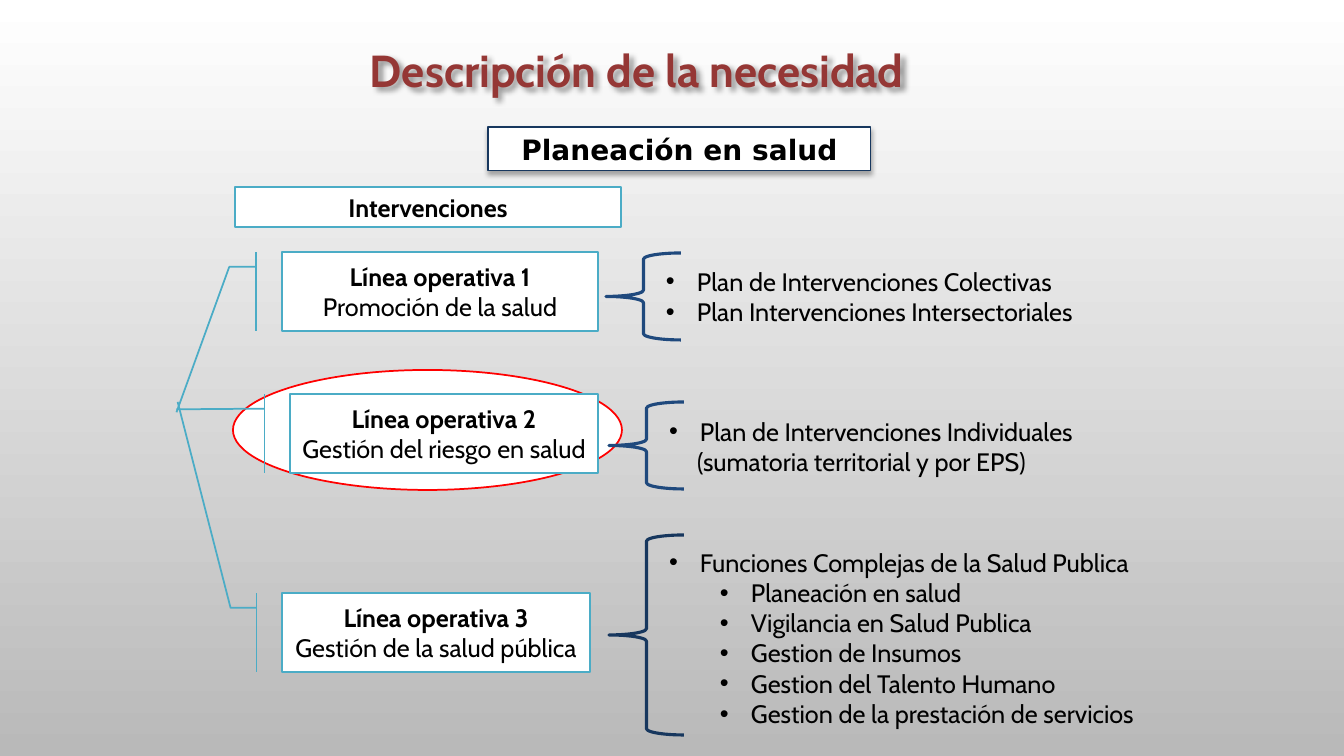
from lxml import etree
from pptx import Presentation
from pptx.dml.color import RGBColor
from pptx.enum.shapes import MSO_SHAPE
from pptx.enum.text import MSO_ANCHOR, MSO_AUTO_SIZE, PP_ALIGN
from pptx.oxml.ns import qn
from pptx.util import Pt

PX = 12192000 / 1344
CENTER, LEFT = PP_ALIGN.CENTER, PP_ALIGN.LEFT
TOP, MIDDLE = MSO_ANCHOR.TOP, MSO_ANCHOR.MIDDLE
RECTANGLE, OVAL, BRACE = MSO_SHAPE.RECTANGLE, MSO_SHAPE.OVAL, MSO_SHAPE.LEFT_BRACE
CALLOUT = MSO_SHAPE.LINE_CALLOUT_2_BORDER_AND_ACCENT_BAR
NO_AUTOFIT = MSO_AUTO_SIZE.NONE

THEME = {
    "white": "FFFFFF", "gray": "B9B9B9", "black": "000000", "red": "FF0000",
    "title": "953735", "aqua": "4BACC6", "blue": "1F497D", "navy": "17375E",
    "font": "Cabin", "heading_font": "DejaVu Sans",
    "title_size": 32, "heading_size": 20, "text_size": 18,
}


def add_outline(kind, box, color, width, filled=True):
    """Add a preset shape with a coloured line, white or hollow."""
    shape = slide.shapes.add_shape(kind, *[round(v * PX) for v in box])
    shape.shadow.inherit = False
    if filled:
        shape.fill.solid()
        shape.fill.fore_color.rgb = RGBColor.from_string(THEME[fill_color])
    else:
        shape.fill.background()
    shape.line.color.rgb = RGBColor.from_string(THEME[color])
    shape.line.width = Pt(width)
    return shape


def write_lines(shape, lines, align=CENTER, anchor=MIDDLE, color="black",
                size="text_size", font="font"):
    """Write (text, bold, level, left margin px, bullet) lines into a shape."""
    frame = shape.text_frame
    frame.word_wrap, frame.auto_size = True, NO_AUTOFIT
    frame.vertical_anchor = anchor
    for side, inset in {"left": 10, "right": 10, "top": 5, "bottom": 5}.items():
        setattr(frame, f"margin_{side}", round(inset * PX))
    for index, (text, bold, level, margin, bullet) in enumerate(lines):
        paragraph = frame.paragraphs[0] if index == 0 else frame.add_paragraph()
        properties = paragraph._p.get_or_add_pPr()
        properties.set("marL", str(round(margin * PX)))
        properties.set("indent", str(round(-HANGING * PX) if bullet else 0))
        if bullet:
            etree.SubElement(properties, qn("a:buFont"), typeface="Arial")
            etree.SubElement(properties, qn("a:buChar"), char="•")
        else:
            etree.SubElement(properties, qn("a:buNone"))
        for name, value in {"level": level, "alignment": align, "line_spacing": 1.0,
                            "space_before": Pt(0), "space_after": Pt(0)}.items():
            setattr(paragraph, name, value)
        run = paragraph.add_run()
        run.text = text
        for name, value in {"name": THEME[font], "size": Pt(THEME[size]),
                            "bold": bold}.items():
            setattr(run.font, name, value)
        run.font.color.rgb = RGBColor.from_string(THEME[color])


HANGING = 31
fill_color = "white"

presentation = Presentation()
presentation.slide_width, presentation.slide_height = round(1344 * PX), round(756 * PX)
slide = presentation.slides.add_slide(presentation.slide_layouts[4])

background = slide.background.fill
background.gradient()
background.gradient_angle = 270
for stop, color in zip(background.gradient_stops, ("white", "gray")):
    stop.color.rgb = RGBColor.from_string(THEME[color])

# Operative lines: the highlighted one sits on the ellipse
add_outline(OVAL, (233, 370, 389, 120), "red", 1.25)
operative_lines = [
    ((282, 252, 316, 79), (2.029, -0.334), "Línea operativa 1", "Promoción de la salud"),
    ((290, 394, 308, 79), (0.194, -0.369), "Línea operativa 2", "Gestión del riesgo en salud"),
    ((282, 593, 308, 79), (-2.419, -0.339), "Línea operativa 3", "Gestión de la salud pública"),
]
for box, leader_end, name, scope in operative_lines:
    callout = add_outline(CALLOUT, box, "aqua", 1.25)
    for index, value in enumerate((0.188, -0.083, 0.188, -0.167, *leader_end)):
        callout.adjustments[index] = value
    write_lines(callout, [(name, True, 0, 0, False), (scope, False, 0, 0, False)])

interventions = add_outline(RECTANGLE, (235, 187, 386, 40), "aqua", 1.25)
write_lines(interventions, [("Intervenciones", True, 0, 0, False)])

# Braced lists
plans = [
    ((606, 253, 75, 87), "blue", (656, 261, 436, 72), [
        ("Plan de Intervenciones Colectivas", 0, 31, True),
        ("Plan Intervenciones Intersectoriales", 0, 31, True)]),
    ((609, 402, 75, 87), "blue", (659, 411, 436, 72), [
        ("Plan de Intervenciones Individuales", 0, 31, True),
        ("(sumatoria territorial y por EPS)", 0, 28, False)]),
    ((609, 535, 75, 200), "navy", (659, 542, 517, 194), [
        ("Funciones Complejas de la Salud Publica", 0, 31, True),
        *[(text, 1, 82, True) for text in (
            "Planeación en salud", "Vigilancia en Salud Publica", "Gestion de Insumos",
            "Gestion del Talento Humano", "Gestion de la prestación de servicios")]]),
]
title, *bodies = list(slide.placeholders)[:5]
for body, (brace_box, color, box, items) in zip(bodies, plans):
    add_outline(BRACE, brace_box, color, 2.25, filled=False)
    body.left, body.top, body.width, body.height = [round(v * PX) for v in box]
    write_lines(body, [(text, False, *rest) for text, *rest in items], LEFT, TOP)
unused_body = bodies[-1]._element
unused_body.getparent().remove(unused_body)

# Headings with soft shadows
heading = add_outline(RECTANGLE, (488, 127, 383, 44), "navy", 0.75)
write_lines(heading, [("Planeación en salud", True, 0, 0, False)],
            size="heading_size", font="heading_font")
title.left, title.top, title.width, title.height = [
    round(v * PX) for v in (39, 37, 1196, 65)]
write_lines(title, [("Descripción de la necesidad", True, 0, 0, False)],
            color="title", size="title_size")
title.shadow.inherit = False
for shape, blur, distance, angle, opacity in (
        (heading, 3.5, 2.2, 90, 32), (title, 4, 3, 45, 40)):
    effects = shape._element.spPr.find(qn("a:effectLst"))
    shadow = etree.SubElement(effects, qn("a:outerShdw"), blurRad=str(Pt(blur)),
                              dist=str(Pt(distance)), dir=str(angle * 60000),
                              rotWithShape="0")
    shadow_color = etree.SubElement(shadow, qn("a:srgbClr"), val=THEME["black"])
    etree.SubElement(shadow_color, qn("a:alpha"), val=str(opacity * 1000))

presentation.save("out.pptx")
